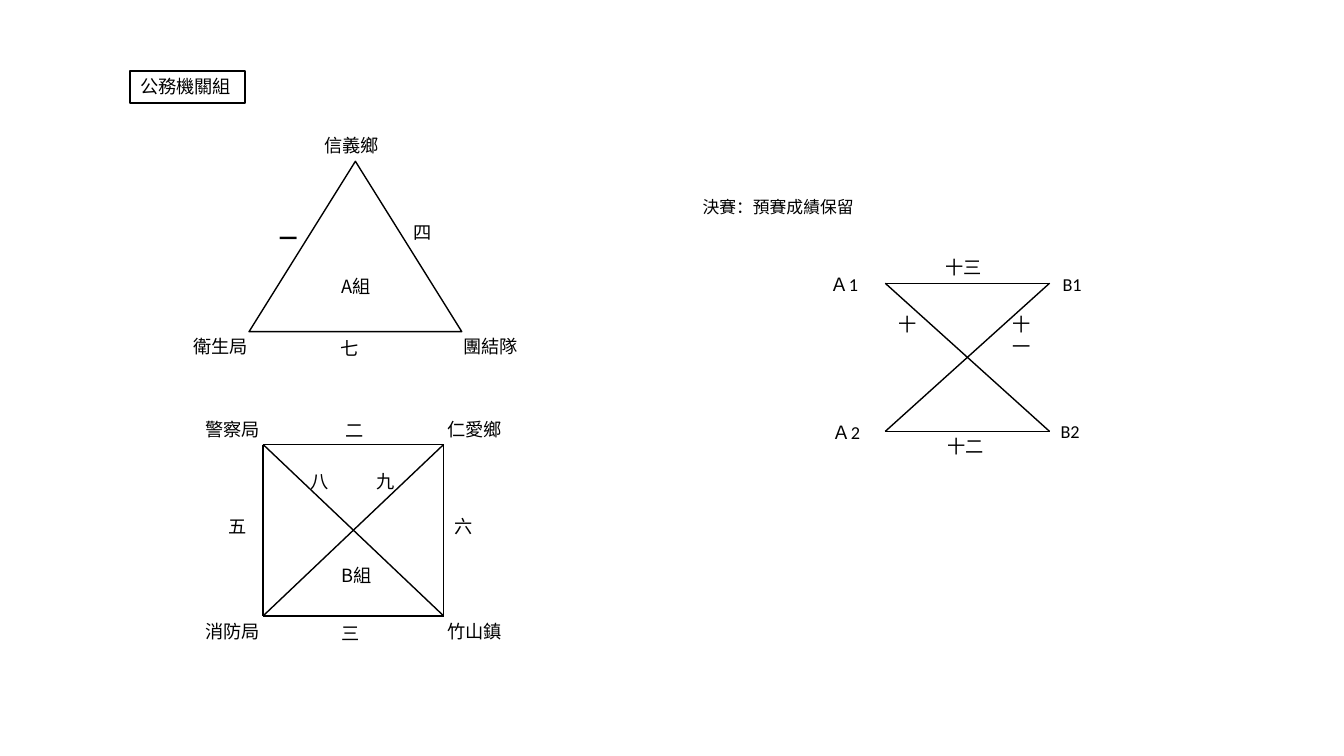
"""Build the match schedule slide for the public agency group."""
from itertools import combinations

from lxml import etree
from pptx import Presentation
from pptx.dml.color import RGBColor
from pptx.enum.shapes import MSO_CONNECTOR, MSO_SHAPE
from pptx.enum.text import MSO_ANCHOR, MSO_AUTO_SIZE, PP_ALIGN
from pptx.oxml.ns import qn
from pptx.util import Inches, Pt

STRAIGHT = MSO_CONNECTOR.STRAIGHT
TRIANGLE = MSO_SHAPE.ISOSCELES_TRIANGLE
MIDDLE, TOP = MSO_ANCHOR.MIDDLE, MSO_ANCHOR.TOP
LEFT = PP_ALIGN.LEFT
NO_FIT = MSO_AUTO_SIZE.NONE

THEME = {
    "ink": RGBColor(0, 0, 0),
    "cjk": "Noto Sans CJK SC",
    "latin": "Calibri",
    "size": Pt(13),
    "note_size": Pt(12),
    "line": Pt(1),
    "frame": Pt(1.5),
}

TITLE = ("公務機關組", (1.29, 0.7, 1.14, 0.32))
NOTE = ("決賽：預賽成績保留", (6.87, 1.9, 3.8, 0.3))
GROUP_A = (2.47, 1.6, 2.11, 1.69)
GROUP_B = (2.61, 4.41, 4.4, 6.11)
FINAL = (8.78, 2.81, 10.41, 4.28)

LABEL_HEIGHT = 0.32
TEAM_WIDTH, GROUP_WIDTH, MATCH_WIDTH, SEED_WIDTH = 0.77, 0.57, 0.42, 0.62

TEAMS = [
    ("信義鄉", 3.12, 1.28), ("衛生局", 1.82, 3.28), ("團結隊", 4.5, 3.28),
    ("警察局", 1.94, 4.1), ("仁愛鄉", 4.34, 4.1),
    ("消防局", 1.94, 6.1), ("竹山鎮", 4.34, 6.1),
]
GROUPS = [("A組", 3.29, 2.68), ("B組", 3.29, 5.55)]
MATCHES = [
    ("四", 4.0, 2.15), ("七", 3.28, 3.3),
    ("二", 3.33, 4.11), ("三", 3.29, 6.12), ("五", 2.17, 5.06),
    ("六", 4.41, 5.06), ("八", 2.98, 4.62), ("九", 3.64, 4.62),
    ("十", 8.81, 3.06), ("十一", 9.94, 3.06),
]
FIRST_MATCH = [("一", 2.67, 2.21)]
FINAL_MATCHES = [("十三", 9.28, 2.49), ("十二", 9.3, 4.27)]
SEEDS = [("Ａ1", 8.14, 2.66), ("B1", 10.44, 2.66),
         ("Ａ2", 8.16, 4.13), ("B2", 10.42, 4.12)]


def write(tf, text, font="cjk", size="size", bold=False, anchor=TOP):
    """Put one formatted line of text into a text frame."""
    frame = {"word_wrap": True, "auto_size": NO_FIT, "vertical_anchor": anchor,
             "margin_left": Inches(0.1), "margin_right": Inches(0.1),
             "margin_top": Inches(0.05), "margin_bottom": Inches(0.05)}
    for name, value in frame.items():
        setattr(tf, name, value)
    p = tf.paragraphs[0]
    p.alignment, p.line_spacing = LEFT, 1.0
    r = p.add_run()
    r.text = text
    for name, value in {"name": THEME[font], "size": THEME[size], "bold": bold}.items():
        setattr(r.font, name, value)
    r.font.color.rgb = THEME["ink"]
    ea = etree.SubElement(r.font._element, qn("a:ea"))
    ea.set("typeface", THEME["cjk"])


def add_label(s, text, box, **style):
    """Add a text box."""
    sp = s.shapes.add_textbox(*map(Inches, box))
    write(sp.text_frame, text, **style)


def add_title(s, text, box):
    """Frame the title placeholder."""
    sp = s.shapes.title
    for name, value in zip(("left", "top", "width", "height"), box):
        setattr(sp, name, Inches(value))
    sp.line.color.rgb = THEME["ink"]
    sp.line.width = THEME["frame"]
    write(sp.text_frame, text, anchor=MIDDLE)


def add_triangle(s, box):
    """Draw the three-team round robin."""
    sp = s.shapes.add_shape(TRIANGLE, *map(Inches, box))
    sp.shadow.inherit = False
    sp.fill.background()
    sp.line.color.rgb = THEME["ink"]
    sp.line.width = THEME["line"]


def add_pairings(s, bounds, sides=True):
    """Join every pair of corners, with or without the vertical sides."""
    left, top, right, bottom = bounds
    corners = [(x, y) for y in (top, bottom) for x in (left, right)]
    for start, end in combinations(corners, 2):
        if start[0] == end[0] and not sides:
            continue
        line = s.shapes.add_connector(STRAIGHT, *map(Inches, start + end))
        line.line.color.rgb = THEME["ink"]
        line.line.width = THEME["line"]
        etree.SubElement(line._element.spPr, qn("a:effectLst"))


def main():
    """Assemble and save the slide."""
    prs = Presentation()
    prs.slide_width, prs.slide_height = Inches(13.33), Inches(7.5)
    s = prs.slides.add_slide(prs.slide_layouts[5])
    add_title(s, *TITLE)
    add_triangle(s, GROUP_A)
    add_pairings(s, GROUP_B)
    add_pairings(s, FINAL, sides=False)
    add_label(s, *NOTE, size="note_size")
    label_sets = [
        (TEAMS, TEAM_WIDTH, {}),
        (GROUPS, GROUP_WIDTH, {}),
        (MATCHES, MATCH_WIDTH, {}),
        (FIRST_MATCH, MATCH_WIDTH, {"bold": True}),
        (FINAL_MATCHES, SEED_WIDTH, {}),
        (SEEDS, SEED_WIDTH, {"font": "latin"}),
    ]
    for labels, width, style in label_sets:
        for text, x, y in labels:
            add_label(s, text, (x, y, width, LABEL_HEIGHT), **style)
    prs.save("out.pptx")


if __name__ == "__main__":
    main()
